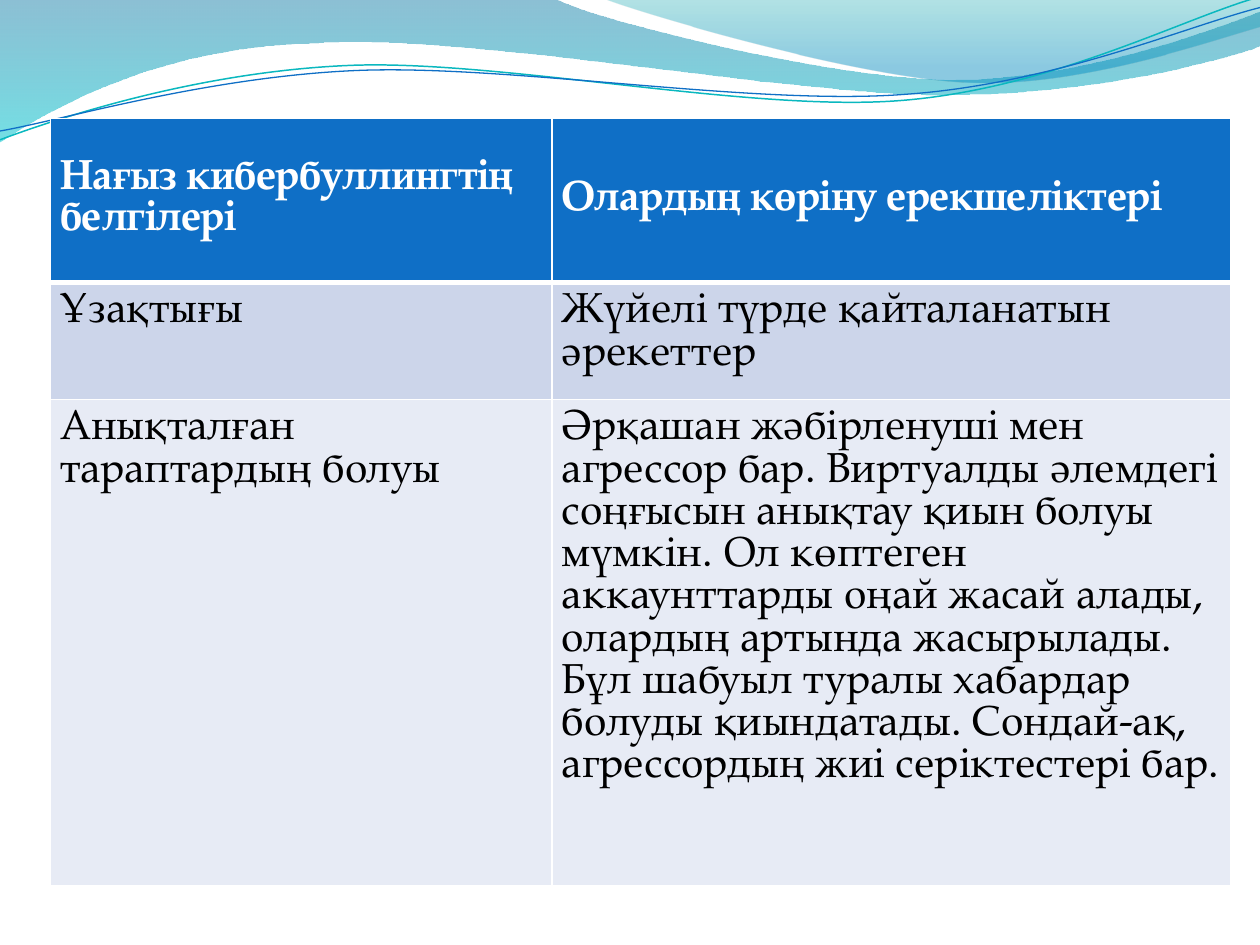
from dataclasses import dataclass

from lxml.etree import SubElement
from pptx import Presentation
from pptx.dml.color import RGBColor
from pptx.enum.text import MSO_ANCHOR
from pptx.oxml import parse_xml
from pptx.oxml.ns import nsdecls, qn
from pptx.util import Inches, Pt


@dataclass(frozen=True)
class Theme:
    font: str = "TeX Gyre Pagella"
    size: int = 24
    header_fill: str = "0F6FC6"
    header_text: str = "FFFFFF"
    body_text: str = "000000"
    band_fills: tuple = ("E7EBF5", "CCD5EA")
    border: str = "FFFFFF"
    teal_line: str = "0AB8BF"
    blue_line: str = "0F6FC6"


THEME = Theme()
SLIDE_SIZE = (10, 7.5)

ROWS = [
    ("Нағыз кибербуллингтің белгілері", "Олардың көріну ерекшеліктері"),
    ("Ұзақтығы", "Жүйелі түрде қайталанатын әрекеттер"),
    (
        "Анықталған тараптардың болуы",
        "Әрқашан жәбірленуші мен агрессор бар. Виртуалды әлемдегі соңғысын "
        "анықтау қиын болуы мүмкін. Ол көптеген аккаунттарды оңай жасай алады, "
        "олардың артында жасырылады. Бұл шабуыл туралы хабардар болуды "
        "қиындатады. Сондай-ақ, агрессордың жиі серіктестері бар.",
    ),
]
TABLE_ORIGIN = (0.4, 0.94)
COLUMN_WIDTHS = (3.98, 5.39)
ROW_HEIGHTS = (1.3, 0.93, 3.86)
CELL_MARGIN = 0.08

# Each outline is a list of points (2 numbers) and Bézier curves (6 numbers).
# Gradient stops are (position %, colour, opacity %).
WAVES = [
    (
        [(0, 0), (4.4, -0.01), (4.76, 0.17, 6.64, 0.63, 7.58, 0.63),
         (8.53, 0.63, 9.58, 0.26, 10, 0.09), (10.01, 0.36),
         (9.83, 0.44, 8.7, 0.76, 7.46, 0.75),
         (6.22, 0.75, 3.82, 0.28, 2.57, 0.34),
         (1.29, 0.36, 0.46, 0.83, -0.01, 1.13), (0, 0)],
        [(0, "0074A1", 45), (100, "00C6CF", 55)],
    ),
    (
        [(4.79, -0.01), (5.09, 0.11, 6.82, 0.62, 7.69, 0.65),
         (8.56, 0.69, 9.61, 0.32, 10, 0.21), (10, 0), (4.79, -0.01)],
        [(0, "00A1A9", 30), (80, "008BBF", 45)],
    ),
]
SWOOSHES = [
    (
        [(0, 1.11), (0.48, 0.93, 1.58, 0.57, 2.77, 0.52),
         (3.95, 0.47, 5.93, 0.89, 7.13, 0.8),
         (8.33, 0.71, 9.38, 0.15, 9.98, -0.02)],
        THEME.teal_line, 0.85,
    ),
    (
        [(0, 1.04), (0.47, 0.96, 1.64, 0.61, 2.83, 0.56),
         (4.03, 0.51, 5.97, 0.84, 7.17, 0.75),
         (8.36, 0.67, 9.41, 0.21, 10, 0.06)],
        THEME.blue_line, 0.75,
    ),
]


def add_outline(slide, outline, close):
    """Build a freeform through the end points, then bend its curved segments."""
    start, *ends = [tuple(map(Inches, part[-2:])) for part in outline]
    builder = slide.shapes.build_freeform(*start)
    builder.add_line_segments(ends, close=close)
    shape = builder.convert_to_shape()
    shape.shadow.inherit = False
    segments = list(shape.element.iter(qn("a:lnTo")))
    for segment, part in zip(segments, outline[1:]):
        if len(part) == 2:
            continue
        segment.tag = qn("a:cubicBezTo")
        segment.clear()
        for x, y in zip(part[::2], part[1::2]):
            SubElement(segment, qn("a:pt"),
                       x=str(Inches(x) - shape.left), y=str(Inches(y) - shape.top))
    return shape


def add_wave(slide, outline, stops):
    shape = add_outline(slide, outline, close=True)
    shape.line.fill.background()
    stop_xml = "".join(
        f'<a:gs pos="{position * 1000}"><a:srgbClr val="{color}">'
        f'<a:alpha val="{opacity * 1000}"/></a:srgbClr></a:gs>'
        for position, color, opacity in stops
    )
    gradient = parse_xml(
        f'<a:gradFill {nsdecls("a")} rotWithShape="1"><a:gsLst>{stop_xml}</a:gsLst>'
        '<a:lin ang="5400000" scaled="0"/></a:gradFill>'
    )
    shape.element.spPr.find(qn("a:custGeom")).addnext(gradient)


def add_swoosh(slide, outline, color, width):
    shape = add_outline(slide, outline, close=False)
    shape.fill.background()
    shape.line.color.rgb = RGBColor.from_string(color)
    shape.line.width = Pt(width)


def set_borders(cell, bottom_width, top_width):
    properties = cell._tc.get_or_add_tcPr()
    widths = {"a:lnL": 1, "a:lnR": 1, "a:lnT": top_width, "a:lnB": bottom_width}
    for index, (tag, width) in enumerate(widths.items()):
        line = SubElement(properties, qn(tag), w=str(Pt(width)))
        SubElement(SubElement(line, qn("a:solidFill")), qn("a:srgbClr"), val=THEME.border)
        properties.insert(index, line)


def fill_cell(cell, text, row):
    is_header = row == 0
    cell.text = text
    cell.margin_left = cell.margin_right = Inches(CELL_MARGIN)
    cell.margin_top = cell.margin_bottom = Inches(CELL_MARGIN)
    cell.vertical_anchor = MSO_ANCHOR.MIDDLE if is_header else MSO_ANCHOR.TOP
    cell.fill.solid()
    cell.fill.fore_color.rgb = RGBColor.from_string(
        THEME.header_fill if is_header else THEME.band_fills[row % 2])
    font = cell.text_frame.paragraphs[0].font
    font.name, font.size, font.bold = THEME.font, Pt(THEME.size), is_header
    font.color.rgb = RGBColor.from_string(
        THEME.header_text if is_header else THEME.body_text)
    set_borders(cell, bottom_width=3 if is_header else 1, top_width=3 if row == 1 else 1)


def add_signs_table(slide):
    size = (sum(COLUMN_WIDTHS), sum(ROW_HEIGHTS))
    table = slide.shapes.add_table(
        len(ROWS), len(COLUMN_WIDTHS), *map(Inches, TABLE_ORIGIN + size)).table
    for column, width in zip(table.columns, COLUMN_WIDTHS):
        column.width = Inches(width)
    for row, height in zip(table.rows, ROW_HEIGHTS):
        row.height = Inches(height)
    for row, texts in enumerate(ROWS):
        for column, text in enumerate(texts):
            fill_cell(table.cell(row, column), text, row)


def main():
    presentation = Presentation()
    presentation.slide_width, presentation.slide_height = map(Inches, SLIDE_SIZE)
    slide = presentation.slides.add_slide(presentation.slide_layouts[6])
    for wave in WAVES:
        add_wave(slide, *wave)
    for swoosh in SWOOSHES:
        add_swoosh(slide, *swoosh)
    add_signs_table(slide)
    presentation.save("out.pptx")


if __name__ == "__main__":
    main()
